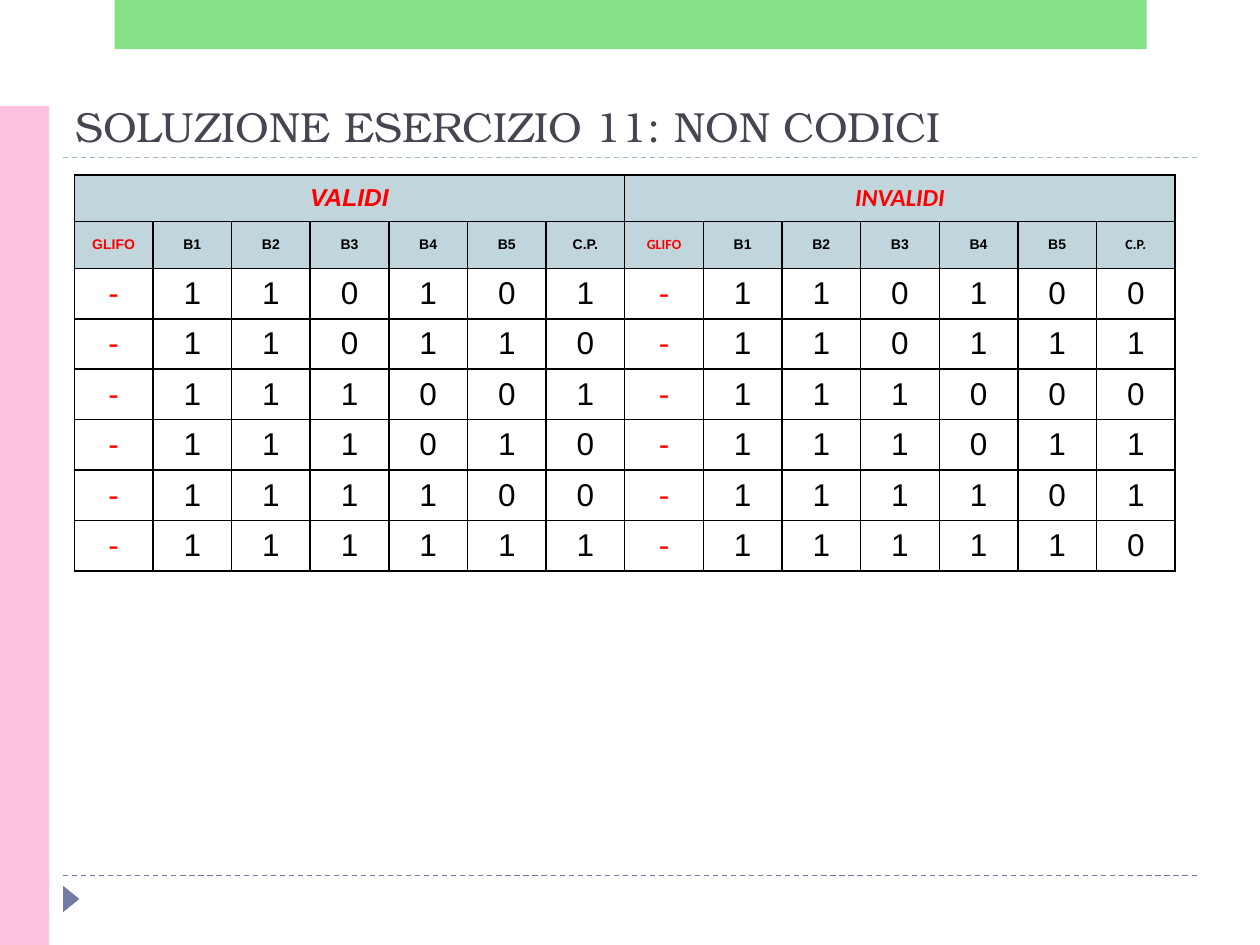
from lxml import etree
from pptx import Presentation
from pptx.dml.color import RGBColor
from pptx.enum import dml, shapes, text
from pptx.oxml.ns import qn
from pptx.util import Inches, Pt

COLORS = {
    "title": "464653", "green": "62D862", "pink": "FFC1E0", "marker": "727CA3",
    "rule": "9FB8CD", "header": "C0D6DC", "red": "FF0000", "black": "000000",
    "white": "FFFFFF",
}
CODES = ["11010", "11011", "11100", "11101", "11110", "11111"]
HEADERS = ["GLIFO", "B1", "B2", "B3", "B4", "B5", "C.P."]
GROUPS = ["VALIDI", "INVALIDI"]


def rgb(name):
    return RGBColor.from_string(COLORS[name])


class SlideBuilder:
    def __init__(self, slide):
        self.s = slide

    def shape(self, kind, box, color, alpha=None, rotation=0):
        sp = self.s.shapes.add_shape(kind, *map(Inches, box))
        sp.shadow.inherit = False
        sp.rotation = rotation
        sp.fill.solid()
        sp.fill.fore_color.rgb = rgb(color)
        sp.line.fill.background()
        if alpha is not None:
            clr = sp.fill._xPr.find(".//" + qn("a:srgbClr"))
            etree.SubElement(clr, qn("a:alpha"), val=str(alpha * 1000))

    def dashed_rule(self, y, color):
        ln = self.s.shapes.add_connector(
            shapes.MSO_CONNECTOR.STRAIGHT, Inches(0.5), Inches(y), Inches(9.5), Inches(y))
        ln.line.color.rgb = rgb(color)
        ln.line.width = Pt(0.75)
        ln.line.dash_style = dml.MSO_LINE.DASH
        etree.SubElement(ln._element.spPr, qn("a:effectLst"))

    def run(self, p, content, size, font, color, bold=False, italic=False):
        r = p.add_run()
        r.text = content
        r.font.size, r.font.name = Pt(size), font
        r.font.bold, r.font.italic = bold, italic
        r.font.color.rgb = rgb(color)

    def title(self, content, box):
        tf = self.s.shapes.add_textbox(*map(Inches, box)).text_frame
        tf.word_wrap = True
        tf.vertical_anchor = text.MSO_ANCHOR.BOTTOM
        self.run(tf.paragraphs[0], content, 24, "TeX Gyre Bonum", "title")

    def table(self, box, row_heights, columns):
        """Add a white table with black borders and equal columns."""
        t = self.s.shapes.add_table(len(row_heights), columns, *map(Inches, box)).table
        for row, height in zip(t.rows, row_heights):
            row.height = Inches(height)
        for col in t.columns:
            col.width = Inches(box[2] / columns)
        for cell in t.iter_cells():
            self.borders(cell)
            cell.fill.solid()
            cell.fill.fore_color.rgb = rgb("white")
        return t

    def borders(self, cell):
        tc_pr = cell._tc.get_or_add_tcPr()
        for side in ("a:lnL", "a:lnR", "a:lnT", "a:lnB"):
            ln = etree.SubElement(tc_pr, qn(side), w=str(Pt(1)))
            fill = etree.SubElement(ln, qn("a:solidFill"))
            etree.SubElement(fill, qn("a:srgbClr"), val=COLORS["black"])

    def cell(self, cell, content, size, font, color, fill="white", bold=False, italic=False):
        cell.vertical_anchor = text.MSO_ANCHOR.MIDDLE
        cell.fill.fore_color.rgb = rgb(fill)
        p = cell.text_frame.paragraphs[0]
        p.alignment = text.PP_ALIGN.CENTER
        self.run(p, content, size, font, color, bold, italic)


def fill_group(b, t, group):
    """Fill one half of the table: even parity if valid, the opposite bit if not."""
    width = len(HEADERS)
    first = group * width
    alt_font = "Calibri" if group else "Arial"
    t.cell(0, first).merge(t.cell(0, first + width - 1))
    b.cell(t.cell(0, first), GROUPS[group], 14, alt_font, "red", "header", True, True)
    for i, label in enumerate(HEADERS):
        font = "Arial" if label.startswith("B") else alt_font
        color = "black" if i else "red"
        b.cell(t.cell(1, first + i), label, 8, font, color, "header", True)
    for row, code in enumerate(CODES, start=2):
        parity = (code.count("1") + group) % 2
        for i, symbol in enumerate(f"-{code}{parity}"):
            b.cell(t.cell(row, first + i), symbol, 18, "Arial", "black" if i else "red")


def main():
    prs = Presentation()
    prs.slide_width, prs.slide_height = Inches(10), Inches(7.5)
    b = SlideBuilder(prs.slides.add_slide(prs.slide_layouts[6]))

    b.dashed_rule(6.95, "marker")
    b.dashed_rule(1.25, "rule")
    b.shape(shapes.MSO_SHAPE.ISOSCELES_TRIANGLE, (0.46, 7.07, 0.21, 0.13), "marker", rotation=90)
    b.shape(shapes.MSO_SHAPE.RECTANGLE, (0, 0.84, 0.39, 6.66), "pink")
    b.shape(shapes.MSO_SHAPE.RECTANGLE, (0.91, 0, 8.19, 0.39), "green", alpha=76)
    b.title("SOLUZIONE ESERCIZIO 11: NON CODICI", (0.5, 0.55, 9, 0.7))

    heights = [0.37] * 2 + [0.4] * len(CODES)
    t = b.table((0.59, 1.39, 8.74, 3.15), heights, len(HEADERS) * len(GROUPS))
    for group in range(len(GROUPS)):
        fill_group(b, t, group)

    prs.save("out.pptx")


if __name__ == "__main__":
    main()
